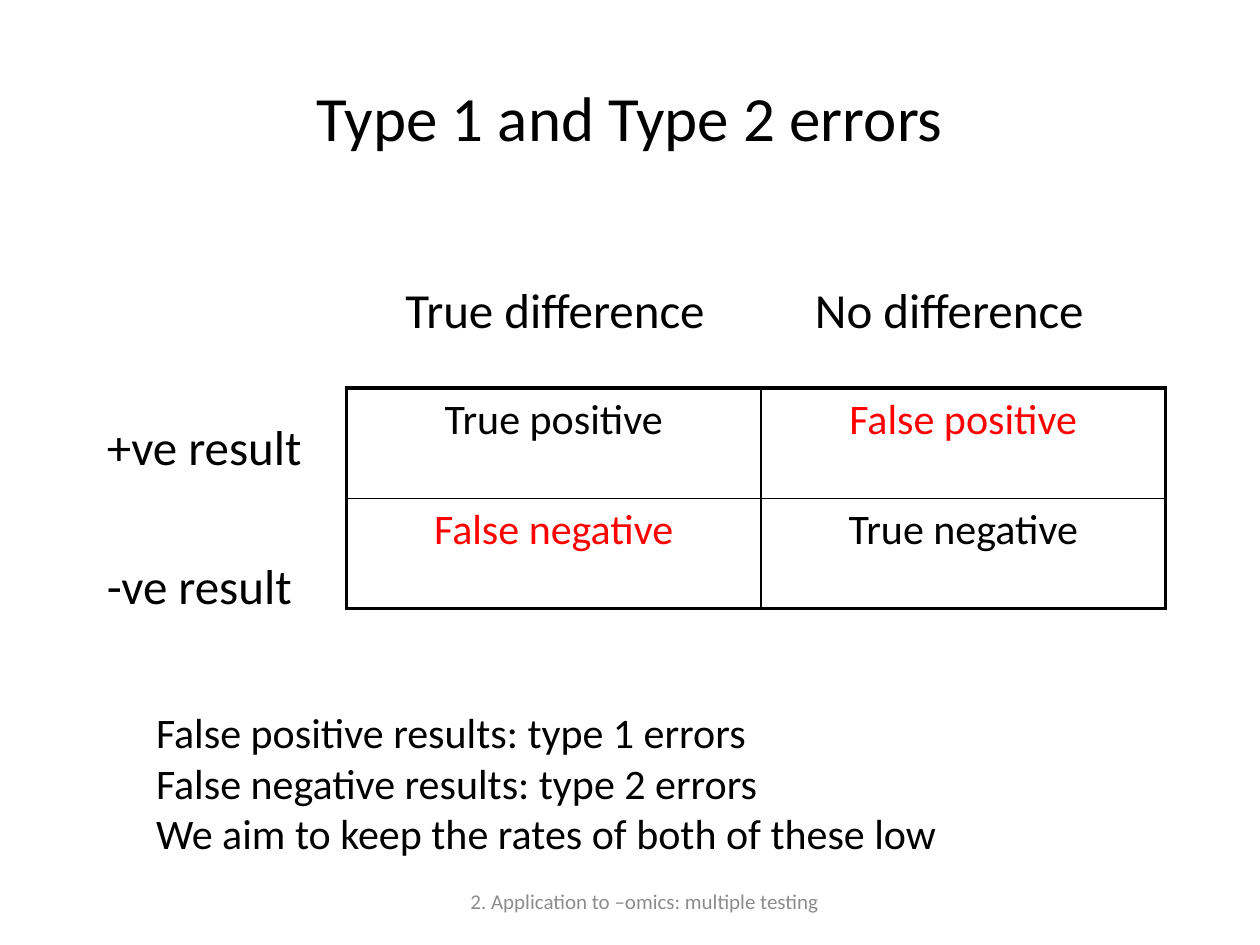
"""Build the slide on type 1 and type 2 errors."""
import pptx
import pptx.dml.color
import pptx.enum.text
import pptx.oxml
import pptx.oxml.ns
import pptx.util

Inches = pptx.util.Inches
Pt = pptx.util.Pt
RGB = pptx.dml.color.RGBColor
ALIGN = pptx.enum.text.PP_ALIGN
ANCHOR = pptx.enum.text.MSO_ANCHOR

BLACK = RGB(0, 0, 0)
RED = RGB(255, 0, 0)
GREY = RGB(0x8C, 0x8C, 0x8C)
THICK = 2.25
THIN = 1


class Deck:
    """Hold the style and the current slide."""

    def __init__(self, font):
        self.font = font
        self.show = pptx.Presentation()
        self.show.slide_width = Inches(10)
        self.show.slide_height = Inches(7.5)
        self.slide = self.show.slides.add_slide(self.show.slide_layouts[5])

    def style(self, frame, size, color=BLACK, align=ALIGN.LEFT):
        """Format every paragraph and run of a text frame."""
        for para in frame.paragraphs:
            para.alignment = align
            for run in para.runs:
                run.font.name = self.font
                run.font.size = Pt(size)
                run.font.color.rgb = color

    def title(self, text, left, top, width, height):
        """Place and fill the title."""
        shape = self.slide.shapes.title
        shape.left, shape.top = Inches(left), Inches(top)
        shape.width, shape.height = Inches(width), Inches(height)
        shape.text_frame.text = text
        shape.text_frame.vertical_anchor = ANCHOR.MIDDLE
        self.style(shape.text_frame, 36, align=ALIGN.CENTER)

    def text(self, lines, left, top, width, height, size,
             color=BLACK, align=ALIGN.LEFT, anchor=ANCHOR.MIDDLE):
        """Add a text box with one paragraph per line."""
        box = self.slide.shapes.add_textbox(
            Inches(left), Inches(top), Inches(width), Inches(height))
        frame = box.text_frame
        frame.word_wrap = True
        frame.vertical_anchor = anchor
        frame.text = "\n".join(lines)
        self.style(frame, size, color, align)

    def edge(self, cell, widths):
        """Draw the left, right, top and bottom borders of a cell."""
        props = cell._tc.get_or_add_tcPr()
        for spot, (side, width) in enumerate(zip("LRTB", widths)):
            line = pptx.oxml.parse_xml(
                f'<a:ln{side} {pptx.oxml.ns.nsdecls("a")} w="{Pt(width)}">'
                f'<a:solidFill><a:srgbClr val="{BLACK}"/></a:solidFill>'
                f'</a:ln{side}>')
            props.insert(spot, line)

    def table(self, rows, left, top, widths, height):
        """Add a table with a thick frame and thin inner lines."""
        count, span = len(rows), len(widths)
        grid = self.slide.shapes.add_table(
            count, span, Inches(left), Inches(top),
            Inches(sum(widths)), Inches(height * count)).table
        grid.first_row = grid.horz_banding = False
        for col, width in zip(grid.columns, widths):
            col.width = Inches(width)
        for r, row in enumerate(rows):
            grid.rows[r].height = Inches(height)
            for c, (text, color) in enumerate(row):
                cell = grid.cell(r, c)
                cell.text_frame.text = text
                self.style(cell.text_frame, 24, color, ALIGN.CENTER)
                cell.fill.background()
                outer = (c == 0, c == span - 1, r == 0, r == count - 1)
                self.edge(cell, [THICK if out else THIN for out in outer])


def main():
    """Build and save the slide."""
    deck = Deck("Calibri")
    deck.title("Type 1 and Type 2 errors", 0.5, 0.3, 9, 1.25)
    labels = [
        ("True difference", 3.12, 2.15, 2.8),
        ("No difference", 6.37, 2.15, 2.8),
        ("+ve result", 0.75, 3.24, 1.95),
        ("-ve result", 0.75, 4.34, 1.95),
    ]
    for text, left, top, width in labels:
        deck.text([text], left, top, width, 0.6, 28)
    deck.table([
        [("True positive", BLACK), ("False positive", RED)],
        [("False negative", RED), ("True negative", BLACK)],
    ], 2.75, 3.08, [3.29, 3.21], 0.875)
    deck.text([
        "False positive results: type 1 errors",
        "False negative results: type 2 errors",
        "We aim to keep the rates of both of these low",
    ], 1.14, 5.56, 8.03, 1.31, 24, anchor=ANCHOR.TOP)
    deck.text(["2. Application to –omics: multiple testing"],
              3.42, 6.95, 3.39, 0.4, 12, GREY, ALIGN.CENTER)
    deck.show.save("out.pptx")


if __name__ == "__main__":
    main()
